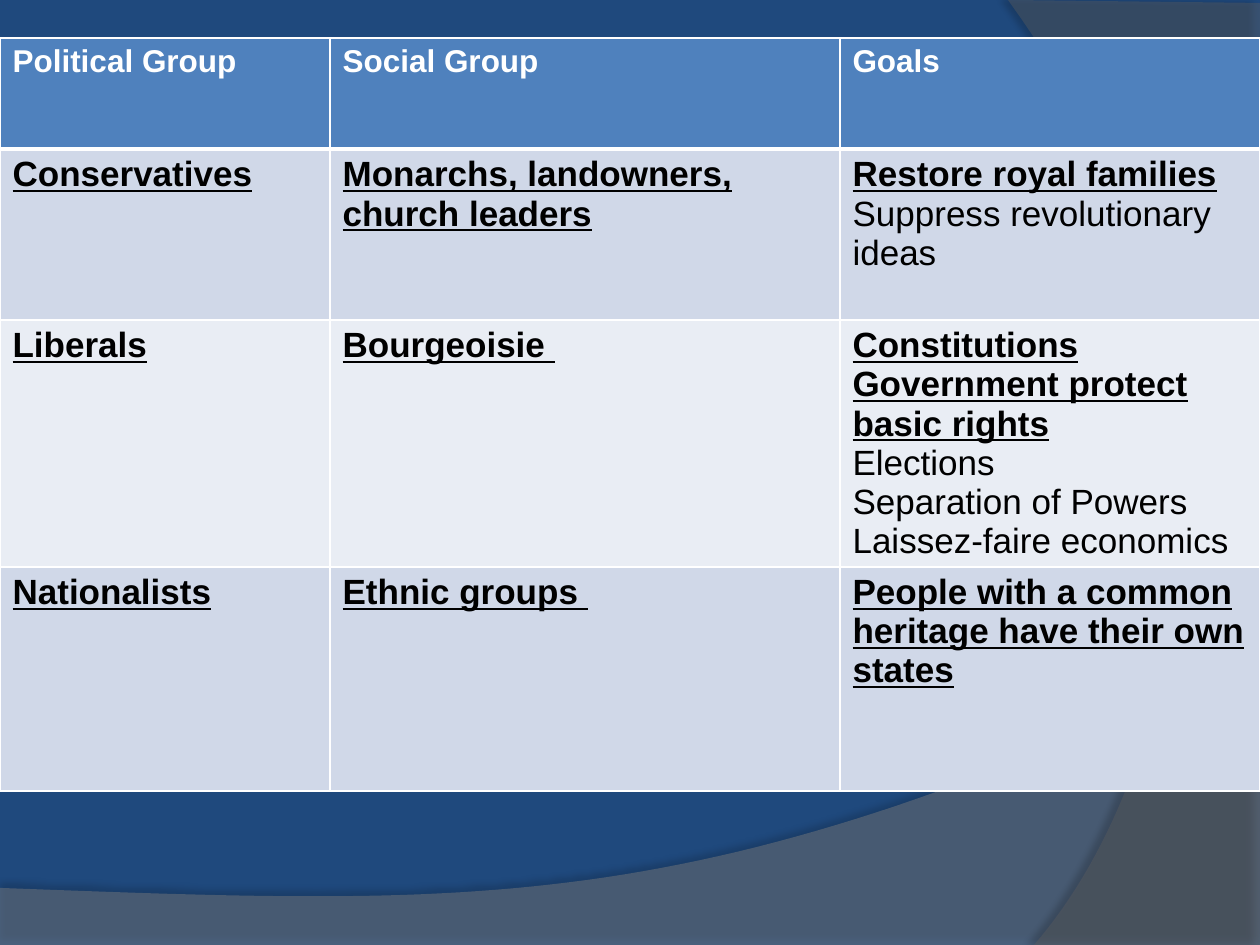
from dataclasses import dataclass

from lxml.etree import SubElement
from pptx import Presentation
from pptx.dml.color import RGBColor
from pptx.oxml.ns import qn
from pptx.util import Emu, Pt

EMU_PER_PX = 914400 / 126
Point = tuple[int, int]


@dataclass(frozen=True)
class Theme:
    font: str = "Arial"
    header_size: int = 18
    body_size: int = 20
    background: str = "1F497D"
    header: str = "4F81BD"
    bands: tuple[str, str] = ("D0D8E8", "E9EDF4")
    border: str = "FFFFFF"
    header_text: str = "FFFFFF"
    body_text: str = "000000"
    wave: str = "7F7F7F"
    arc: str = "5E5E5E"
    shadow: str = "000000"


@dataclass(frozen=True)
class Swoosh:
    """Straight corners followed by one cubic curve (two controls and an end)."""
    corners: list[Point]
    curve: list[Point]
    color: str
    opacity: int
    shadow_opacity: int
    shadow_distance: float
    shadow_angle: int


@dataclass(frozen=True)
class Group:
    name: str
    members: str
    key_goals: list[str]
    other_goals: list[str]


THEME = Theme()
SWOOSHES = [
    Swoosh([(0, 888), (0, 946), (1260, 946), (1260, 655)],
           [(704, 919), (493, 906), (0, 888)], THEME.wave, 45, 35, 3.5, 270),
    Swoosh([(1260, 3), (1260, 945), (1034, 945)],
           [(1178, 780), (1283, 378), (1008, 0)], THEME.arc, 40, 45, 4, 180),
]
HEADINGS = ["Political Group", "Social Group", "Goals"]
GROUPS = [
    Group("Conservatives", "Monarchs, landowners, church leaders",
          ["Restore royal families"], ["Suppress revolutionary ideas"]),
    Group("Liberals", "Bourgeoisie ",
          ["Constitutions", "Government protect basic rights"],
          ["Elections", "Separation of Powers", "Laissez-faire economics"]),
    Group("Nationalists", "Ethnic groups ",
          ["People with a common heritage have their own states"], []),
]
COLUMN_WIDTHS = [330, 510, 420]
ROW_HEIGHTS = [111, 171, 243, 224]
TABLE_TOP = 38


def px(n: float) -> Emu:
    return Emu(round(n * EMU_PER_PX))


def add_color(parent, color: str, opacity: int = 100) -> None:
    clr = SubElement(parent, qn("a:srgbClr"), val=color)
    if opacity < 100:
        SubElement(clr, qn("a:alpha"), val=str(opacity * 1000))


def curve_points(start: Point, controls: list[Point], steps: int = 60) -> list[Point]:
    """Sample a cubic Bezier curve, in EMU."""
    nodes = [start, *controls]
    points = []
    for i in range(1, steps + 1):
        t = i / steps
        weights = ((1 - t) ** 3, 3 * t * (1 - t) ** 2, 3 * t * t * (1 - t), t ** 3)
        points.append(tuple(px(sum(w * node[axis] for w, node in zip(weights, nodes)))
                            for axis in (0, 1)))
    return points


def draw_swoosh(shapes, swoosh: Swoosh) -> None:
    corners = [(px(x), px(y)) for x, y in swoosh.corners]
    builder = shapes.build_freeform(*corners[0])
    builder.add_line_segments(
        corners[1:] + curve_points(swoosh.corners[-1], swoosh.curve), close=True)
    sp = builder.convert_to_shape()
    sp.shadow.inherit = False
    sp.line.fill.background()
    sp.fill.solid()
    sp.fill.fore_color.rgb = RGBColor.from_string(swoosh.color)
    props = sp.element.spPr
    fill_color = props.find(qn("a:solidFill")).find(qn("a:srgbClr"))
    SubElement(fill_color, qn("a:alpha"), val=str(swoosh.opacity * 1000))
    shadow = SubElement(props.find(qn("a:effectLst")), qn("a:outerShdw"),
                        blurRad=str(Pt(4)), dist=str(Pt(swoosh.shadow_distance)),
                        dir=str(swoosh.shadow_angle * 60000), rotWithShape="0")
    add_color(shadow, THEME.shadow, swoosh.shadow_opacity)


def write(p, text: str, *, size: int, color: str, bold: bool = False,
          underline: bool = False) -> None:
    r = p.add_run()
    r.text = text
    r.font.name = THEME.font
    r.font.size = Pt(size)
    r.font.bold = bold
    r.font.underline = underline
    r.font.color.rgb = RGBColor.from_string(color)


def style_cell(cell, fill: str, top: int = 1, bottom: int = 1) -> None:
    props = cell._tc.get_or_add_tcPr()
    for side, width in (("L", 1), ("R", 1), ("T", top), ("B", bottom)):
        ln = SubElement(props, qn(f"a:ln{side}"), w=str(Pt(width)))
        add_color(SubElement(ln, qn("a:solidFill")), THEME.border)
    cell.fill.solid()
    cell.fill.fore_color.rgb = RGBColor.from_string(fill)


def fill_body_cell(cell, key_lines: list[str], other_lines: list[str]) -> None:
    tf = cell.text_frame
    for i, text in enumerate(key_lines + other_lines):
        p = tf.add_paragraph() if i else tf.paragraphs[0]
        is_key = i < len(key_lines)
        write(p, text, size=THEME.body_size, color=THEME.body_text,
              bold=is_key, underline=is_key)


def draw_table(shapes) -> None:
    table = shapes.add_table(len(ROW_HEIGHTS), len(COLUMN_WIDTHS), 0, px(TABLE_TOP),
                             px(sum(COLUMN_WIDTHS)), px(sum(ROW_HEIGHTS))).table
    for column, width in zip(table.columns, COLUMN_WIDTHS):
        column.width = px(width)
    for row, height in zip(table.rows, ROW_HEIGHTS):
        row.height = px(height)
    for col, heading in enumerate(HEADINGS):
        cell = table.cell(0, col)
        style_cell(cell, THEME.header, bottom=3)
        write(cell.text_frame.paragraphs[0], heading, size=THEME.header_size,
              color=THEME.header_text, bold=True)
    for row, group in enumerate(GROUPS, start=1):
        contents = [([group.name], []), ([group.members], []),
                    (group.key_goals, group.other_goals)]
        for col, (key_lines, other_lines) in enumerate(contents):
            cell = table.cell(row, col)
            style_cell(cell, THEME.bands[(row - 1) % 2], top=3 if row == 1 else 1)
            fill_body_cell(cell, key_lines, other_lines)


def main() -> None:
    prs = Presentation()
    prs.slide_width, prs.slide_height = px(1260), px(945)
    s = prs.slides.add_slide(prs.slide_layouts[6])
    s.background.fill.solid()
    s.background.fill.fore_color.rgb = RGBColor.from_string(THEME.background)
    for swoosh in SWOOSHES:
        draw_swoosh(s.shapes, swoosh)
    draw_table(s.shapes)
    prs.save("out.pptx")


if __name__ == "__main__":
    main()
